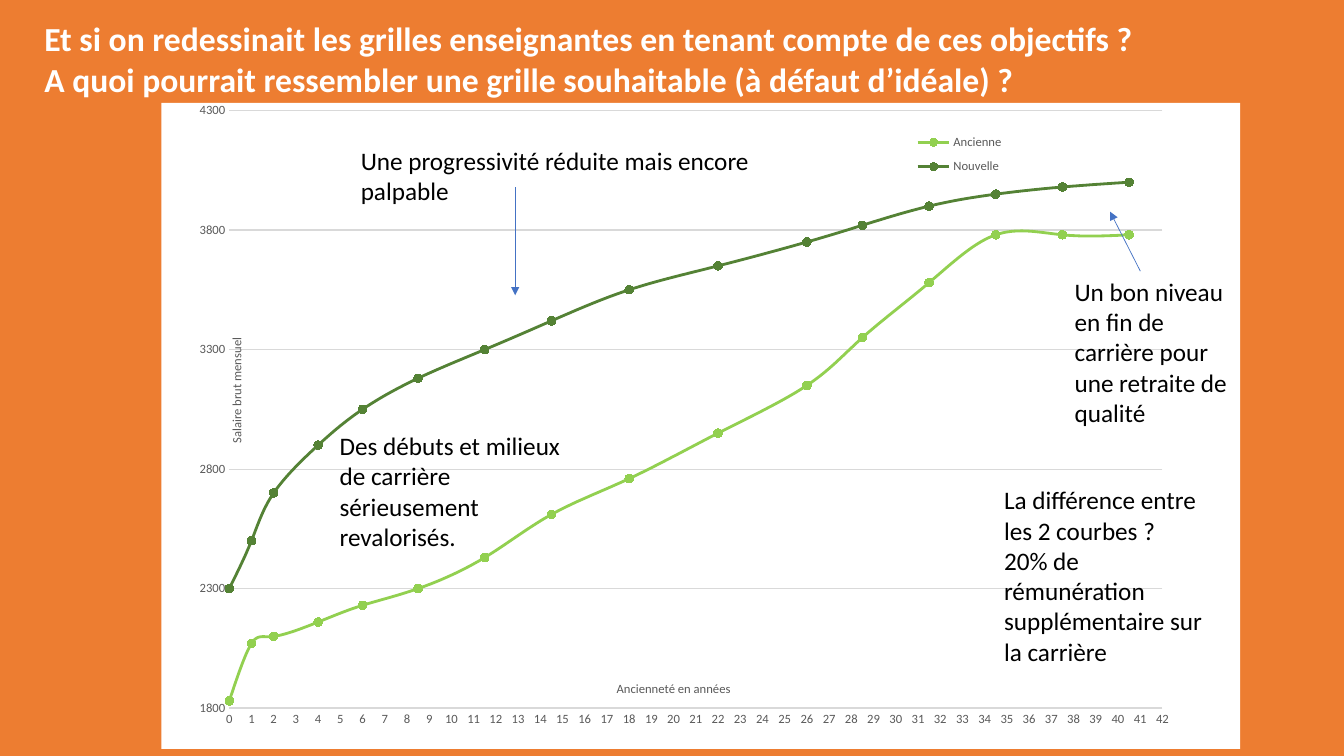
from dataclasses import dataclass

from lxml import etree
from pptx import Presentation
from pptx.chart.data import XyChartData
from pptx.dml.color import RGBColor
from pptx.enum.chart import (XL_CHART_TYPE, XL_LEGEND_POSITION, XL_MARKER_STYLE,
                             XL_TICK_MARK)
from pptx.enum.shapes import MSO_CONNECTOR
from pptx.enum.text import MSO_ANCHOR, MSO_AUTO_SIZE, PP_ALIGN
from pptx.oxml import parse_xml
from pptx.oxml.ns import nsdecls, qn
from pptx.util import Inches, Pt

SMOOTH_SCATTER = XL_CHART_TYPE.XY_SCATTER_SMOOTH
LEGEND_RIGHT = XL_LEGEND_POSITION.RIGHT
CIRCLE = XL_MARKER_STYLE.CIRCLE
NO_TICK = XL_TICK_MARK.NONE
STRAIGHT = MSO_CONNECTOR.STRAIGHT
TOP, LEFT = MSO_ANCHOR.TOP, PP_ALIGN.LEFT
FIT_SHAPE = MSO_AUTO_SIZE.SHAPE_TO_FIT_TEXT

FONT = "Calibri"
ORANGE, WHITE, BLACK = "ED7D31", "FFFFFF", "000000"
GREY, LIGHT_GREY, BLUE = "595959", "D9D9D9", "4472C4"


@dataclass
class Note:
    area: tuple[float, float, float, float]
    lines: list[str]


@dataclass
class Arrow:
    start: tuple[float, float]
    end: tuple[float, float]


@dataclass
class Curve:
    name: str
    color: str
    salaries: list[int]


@dataclass
class AxisFormat:
    title: str
    title_place: tuple[float, float]
    scale: dict[str, float]


TITLE = Note((0.34, 0.13, 12.65, 0.91), [
    "Et si on redessinait les grilles enseignantes en tenant compte de ces objectifs ?",
    "A quoi pourrait ressembler une grille souhaitable (à défaut d’idéale) ?"])
NOTES = [
    Note((3.27, 4.22, 2.54, 1.31),
         ["Des débuts et milieux de carrière sérieusement revalorisés."]),
    Note((3.48, 1.39, 4.83, 0.71), ["Une progressivité réduite mais encore palpable"]),
    Note((10.56, 2.69, 1.86, 1.62),
         ["Un bon niveau en fin de carrière pour une retraite de qualité"]),
    Note((9.86, 4.76, 2.3, 1.92),
         ["La différence entre les 2 courbes ?",
          "20% de rémunération supplémentaire sur la carrière"]),
]
ARROWS = [Arrow((11.31, 2.69), (11.01, 2.1)), Arrow((5.11, 1.86), (5.11, 2.93))]
YEARS = [0, 1, 2, 4, 6, 8.5, 11.5, 14.5, 18, 22, 26, 28.5, 31.5, 34.5, 37.5, 40.5]
CURVES = [
    Curve("Ancienne", "92D050", [1830, 2070, 2100, 2160, 2230, 2300, 2430, 2610, 2760,
                                 2950, 3150, 3350, 3580, 3780, 3780, 3780]),
    Curve("Nouvelle", "548235", [2300, 2500, 2700, 2900, 3050, 3180, 3300, 3420, 3550,
                                 3650, 3750, 3820, 3900, 3950, 3980, 4000]),
]
SENIORITY = AxisFormat("Ancienneté en années", (0.42, 0.89), {
    "minimum_scale": 0, "maximum_scale": 42, "major_unit": 1})
SALARY = AxisFormat("Salaire brut mensuel", (0.06, 0.36), {
    "minimum_scale": 1800, "maximum_scale": 4300, "major_unit": 500})


def rgb(color: str) -> RGBColor:
    return RGBColor.from_string(color)


def format_font(font, size: float, color: str, bold: bool = False) -> None:
    for key, value in {"name": FONT, "size": Pt(size), "bold": bold}.items():
        setattr(font, key, value)
    font.color.rgb = rgb(color)


def format_line(line, color: str, width: float) -> None:
    line.color.rgb = rgb(color)
    line.width = Pt(width)


def write_lines(box, note: Note, size: float, color: str, bold: bool = False) -> None:
    frame = box.text_frame
    frame.text = "\n".join(note.lines)
    for key, value in {"word_wrap": True, "vertical_anchor": TOP,
                       "auto_size": FIT_SHAPE}.items():
        setattr(frame, key, value)
    for para in frame.paragraphs:
        for key, value in {"alignment": LEFT, "line_spacing": 1.0,
                           "space_before": Pt(0)}.items():
            setattr(para, key, value)
        for span in para.runs:
            format_font(span.font, size, color, bold)


def place_part(parent, index: int, place: tuple[float, ...], inner: bool = False) -> None:
    """Position a chart part by fractions of the chart area."""
    for old in parent.findall(qn("c:layout")):
        parent.remove(old)
    layout = etree.Element(qn("c:layout"))
    manual = etree.SubElement(layout, qn("c:manualLayout"))
    settings = [("layoutTarget", "inner")] if inner else []
    settings += [("xMode", "edge"), ("yMode", "edge")]
    settings += [(key, str(value)) for key, value in zip("xywh", place)]
    for key, value in settings:
        etree.SubElement(manual, qn(f"c:{key}")).set("val", value)
    parent.insert(index, layout)


def format_axis(axis, style: AxisFormat) -> None:
    for key, value in {**style.scale, "major_tick_mark": NO_TICK,
                       "minor_tick_mark": NO_TICK}.items():
        setattr(axis, key, value)
    format_font(axis.tick_labels.font, 9, GREY)
    axis.tick_labels.number_format = "General"
    axis.tick_labels.number_format_is_linked = False
    frame = axis.axis_title.text_frame
    frame.text = style.title
    format_font(frame.paragraphs[0].runs[0].font, 9, GREY)
    place_part(axis.axis_title._element, 1, style.title_place)


def add_salary_chart(page) -> None:
    data = XyChartData()
    for curve in CURVES:
        series = data.add_series(curve.name)
        for year, salary in zip(YEARS, curve.salaries):
            series.add_data_point(year, salary)
    area = map(Inches, (1.6, 1.02, 10.7, 6.41))
    chart = page.shapes.add_chart(SMOOTH_SCATTER, *area, data).chart
    chart.has_title = False
    format_font(chart.font, 10, BLACK)
    chart.plots[0].vary_by_categories = False
    space = chart._chartSpace
    space.find(qn("c:chart")).addnext(parse_xml(
        f'<c:spPr {nsdecls("c", "a")}><a:solidFill><a:srgbClr val="{WHITE}"/>'
        '</a:solidFill><a:ln><a:noFill/></a:ln></c:spPr>'))
    place_part(space.xpath("c:chart/c:plotArea")[0], 0, (0.063, 0.012, 0.865, 0.925), True)

    # Curves
    for series, curve in zip(chart.plots[0].series, CURVES):
        format_line(series.format.line, curve.color, 2)
        series.marker.style, series.marker.size = CIRCLE, 6
        series.marker.format.fill.solid()
        series.marker.format.fill.fore_color.rgb = rgb(curve.color)
        format_line(series.marker.format.line, curve.color, 0.75)
    for smooth in space.xpath(".//c:ser/c:smooth"):
        smooth.set("val", "1")

    # Axes
    years, salaries = chart.category_axis, chart.value_axis
    format_axis(years, SENIORITY)
    format_axis(salaries, SALARY)
    years.has_major_gridlines = False
    format_line(years.format.line, LIGHT_GREY, 1)
    salaries.format.line.fill.background()
    format_line(salaries.major_gridlines.format.line, LIGHT_GREY, 0.75)

    # Legend
    chart.has_legend = True
    legend = chart.legend
    legend.position = LEGEND_RIGHT
    legend.include_in_layout = False
    format_font(legend.font, 9, GREY)
    place_part(legend._element, 1, (0.69, 0.035, 0.1, 0.09))


def add_arrow(page, arrow: Arrow) -> None:
    ends = map(Inches, (*arrow.start, *arrow.end))
    connector = page.shapes.add_connector(STRAIGHT, *ends)
    format_line(connector.line, BLUE, 0.5)
    line = connector.line._get_or_add_ln()
    etree.SubElement(line, qn("a:tailEnd")).set("type", "triangle")
    etree.SubElement(connector._element.spPr, qn("a:effectLst"))


def main() -> None:
    deck = Presentation()
    deck.slide_width, deck.slide_height = Inches(13.33), Inches(7.5)
    page = deck.slides.add_slide(deck.slide_layouts.get_by_name("Title Only"))
    page.background.fill.solid()
    page.background.fill.fore_color.rgb = rgb(ORANGE)

    # Title
    title = page.shapes.title
    for key, value in zip(("left", "top", "width", "height"), TITLE.area):
        setattr(title, key, Inches(value))
    write_lines(title, TITLE, 24, WHITE, True)

    # Chart with its notes and arrows
    add_salary_chart(page)
    for note in NOTES:
        write_lines(page.shapes.add_textbox(*map(Inches, note.area)), note, 18, BLACK)
    for arrow in ARROWS:
        add_arrow(page, arrow)
    deck.save("out.pptx")


if __name__ == "__main__":
    main()
